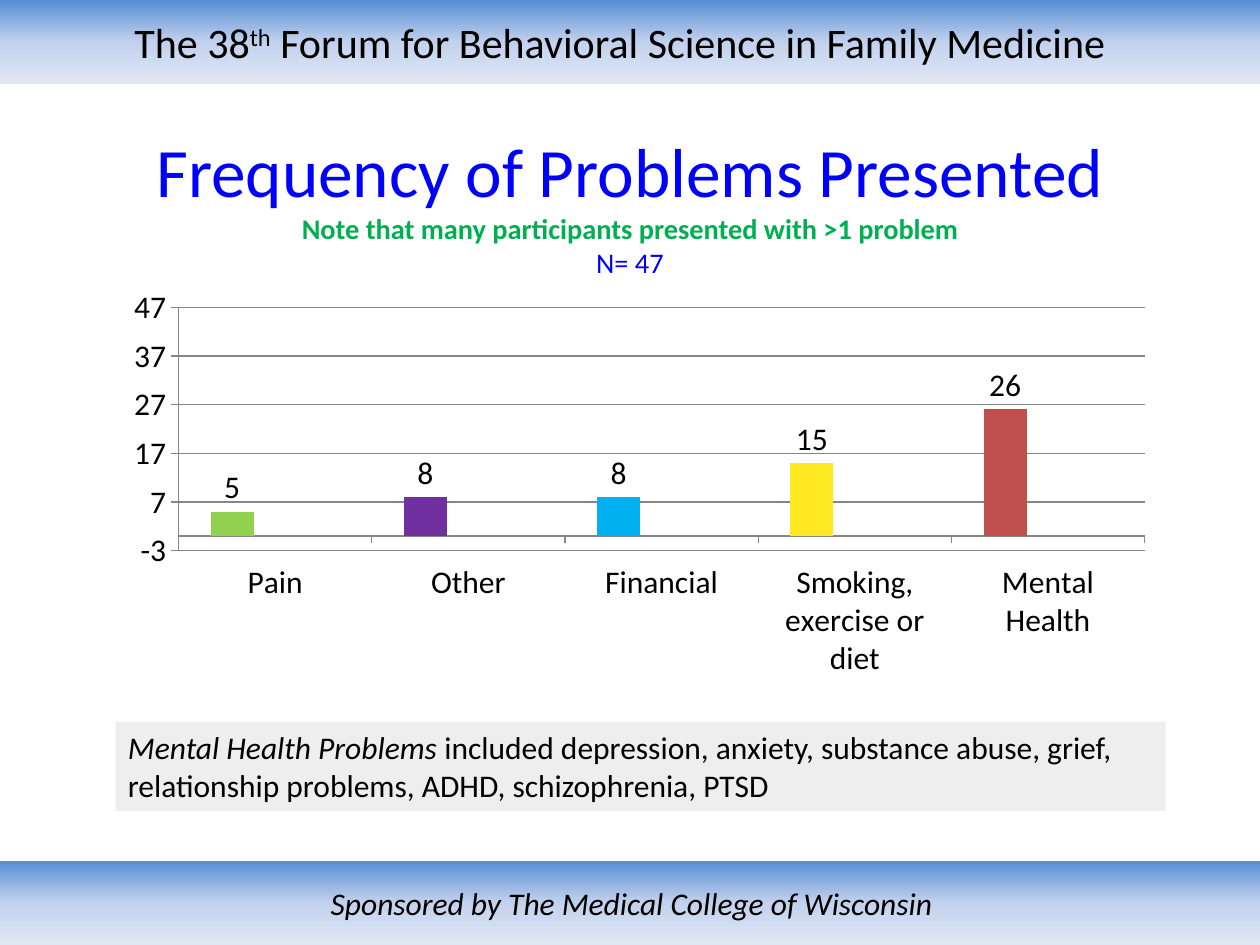
from copy import deepcopy

from lxml.etree import SubElement
from pptx import Presentation
from pptx.chart.data import CategoryChartData
from pptx.dml.color import RGBColor
from pptx.enum.chart import XL_CHART_TYPE, XL_LABEL_POSITION, XL_TICK_LABEL_POSITION, XL_TICK_MARK
from pptx.enum.shapes import MSO_SHAPE
from pptx.enum.text import MSO_ANCHOR, PP_ALIGN
from pptx.oxml.ns import qn
from pptx.util import Cm, Pt

BLACK = RGBColor(0x00, 0x00, 0x00)
BLUE = RGBColor(0x00, 0x00, 0xFF)
GREEN = RGBColor(0x00, 0xB0, 0x50)
GRAY = RGBColor(0xBF, 0xBF, 0xBF)
AXIS_GRAY = RGBColor(0x86, 0x86, 0x86)
BAND_STOPS = [
    (0, RGBColor(0x55, 0x8E, 0xD5)),
    (0.5, RGBColor(0xC2, 0xD1, 0xED)),
    (1, RGBColor(0xE1, 0xE8, 0xF5)),
]
PROBLEMS = [
    ("Pain", 5, RGBColor(0x92, 0xD0, 0x50)),
    ("Other", 8, RGBColor(0x70, 0x30, 0xA0)),
    ("Financial", 8, RGBColor(0x00, 0xB0, 0xF0)),
    ("Smoking, exercise or diet", 15, RGBColor(0xFF, 0xE9, 0x23)),
    ("Mental Health", 26, RGBColor(0xC0, 0x50, 0x4D)),
]
PLOT_LAYOUT = {"x": 0.06, "y": 0.06, "w": 0.92, "h": 0.62}


def apply_format(target, values):
    for name, value in values.items():
        setattr(target, name, value)


class SlideBuilder:
    font_name = "Calibri"

    def __init__(self, slide):
        self.slide = slide

    def set_font(self, font, size, color=BLACK, **values):
        apply_format(font, {"name": self.font_name, "size": Pt(size), **values})
        font.color.rgb = color

    def fill_text(self, shape, paragraphs, alignment=PP_ALIGN.CENTER, **frame_values):
        """Fill a shape with paragraphs, each a list of (text, font values) runs."""
        frame = shape.text_frame
        apply_format(frame, {"word_wrap": True, "vertical_anchor": MSO_ANCHOR.MIDDLE, **frame_values})
        for index, runs in enumerate(paragraphs):
            paragraph = frame.add_paragraph() if index else frame.paragraphs[0]
            paragraph.alignment = alignment
            for text, values in runs:
                values = dict(values)
                baseline = values.pop("baseline", None)
                run = paragraph.add_run()
                run.text = text
                self.set_font(run.font, **values)
                if baseline:
                    run.font._element.set("baseline", baseline)

    def add_rectangle(self, left, top, width, height):
        shape = self.slide.shapes.add_shape(
            MSO_SHAPE.RECTANGLE, Cm(left), Cm(top), Cm(width), Cm(height))
        shape.shadow.inherit = False
        shape.line.fill.background()
        return shape

    def add_band(self, top, width, runs, **frame_values):
        shape = self.add_rectangle(0, top, width, 1.7)
        shape.fill.gradient()
        shape.fill.gradient_angle = 270
        stop_list = shape._element.spPr.find(".//" + qn("a:gsLst"))
        stop_list.append(deepcopy(stop_list[0]))
        for stop, (position, color) in zip(shape.fill.gradient_stops, BAND_STOPS):
            stop.position = position
            stop.color.rgb = color
        self.fill_text(shape, [runs], **frame_values)

    def add_title(self, left, top, width, height, paragraphs, **frame_values):
        box = self.slide.shapes.add_textbox(Cm(left), Cm(top), Cm(width), Cm(height))
        self.fill_text(box, paragraphs, **frame_values)

    def add_note(self, left, top, width, height, runs):
        shape = self.add_rectangle(left, top, width, height)
        shape.fill.solid()
        shape.fill.fore_color.rgb = GRAY
        color = shape._element.spPr.find(".//" + qn("a:srgbClr"))
        SubElement(color, qn("a:alpha"), val="25000")
        self.fill_text(shape, [runs], PP_ALIGN.LEFT, vertical_anchor=MSO_ANCHOR.TOP)

    def add_column_chart(self, left, top, width, height, problems):
        names, counts, colors = zip(*problems)
        data = CategoryChartData()
        data.categories = names
        data.add_series("Series 1", counts)
        for name in ("Series 2", "Series 3"):
            data.add_series(name, [None] * len(names))
        chart = self.slide.shapes.add_chart(
            XL_CHART_TYPE.COLUMN_CLUSTERED, Cm(left), Cm(top), Cm(width), Cm(height), data).chart
        apply_format(chart, {"has_legend": False, "has_title": False})
        self.set_font(chart.font, 18)

        plot = chart.plots[0]
        apply_format(plot, {"gap_width": 150, "overlap": 0, "vary_by_categories": False})
        counted = plot.series[0]
        for series, color in zip(plot.series, (colors[0], colors[-1], RGBColor(0x9B, 0xBB, 0x59))):
            series.format.fill.solid()
            series.format.fill.fore_color.rgb = color
        for index, color in enumerate(colors[1:], start=1):
            fill = counted.points[index].format.fill
            fill.solid()
            fill.fore_color.rgb = color
        apply_format(counted.data_labels,
                     {"show_value": True, "position": XL_LABEL_POSITION.OUTSIDE_END})

        apply_format(chart.value_axis, {"minimum_scale": -3, "maximum_scale": 47,
                                        "major_unit": 10, "has_major_gridlines": True})
        for axis in (chart.category_axis, chart.value_axis):
            apply_format(axis, {"major_tick_mark": XL_TICK_MARK.OUTSIDE,
                                "minor_tick_mark": XL_TICK_MARK.NONE,
                                "tick_label_position": XL_TICK_LABEL_POSITION.LOW})
        for part in (chart.category_axis, chart.value_axis, chart.value_axis.major_gridlines):
            part.format.line.color.rgb = AXIS_GRAY
            part.format.line.width = Pt(0.75)
        self.place_plot(chart)

    def place_plot(self, chart):
        """Fix the inner plot area as fractions of the chart frame."""
        plot_area = chart._chartSpace.find(".//" + qn("c:plotArea"))
        layout = plot_area.find(qn("c:layout"))
        if layout is None:
            layout = SubElement(plot_area, qn("c:layout"))
            plot_area.insert(0, layout)
        manual = SubElement(layout, qn("c:manualLayout"))
        SubElement(manual, qn("c:layoutTarget"), val="inner")
        for side in ("x", "y"):
            SubElement(manual, qn(f"c:{side}Mode"), val="edge")
        for side, fraction in PLOT_LAYOUT.items():
            SubElement(manual, qn(f"c:{side}"), val=str(fraction))


def main():
    presentation = Presentation()
    presentation.slide_width = Cm(25.4)
    presentation.slide_height = Cm(19.05)
    builder = SlideBuilder(presentation.slides.add_slide(presentation.slide_layouts[6]))

    builder.add_band(0, 25.4, [
        ("The 38", {"size": 24}),
        ("th", {"size": 24, "baseline": "30000"}),
        (" Forum for Behavioral Science in Family Medicine", {"size": 24}),
    ], margin_right=Cm(0.65))
    builder.add_band(17.35, 25.47, [
        ("Sponsored by The Medical College of Wisconsin", {"size": 18, "italic": True}),
    ])
    builder.add_title(1.27, 3.38, 22.86, 2.13, [
        [("Frequency of Problems Presented", {"size": 39.6, "color": BLUE})],
        [("Note that many participants presented with >1 problem",
          {"size": 16.2, "color": GREEN, "bold": True})],
        [("N= 47", {"size": 16.2, "color": BLUE})],
    ], margin_bottom=Cm(0.81))
    builder.add_column_chart(2.33, 5.72, 21.17, 7.93, PROBLEMS)
    builder.add_note(2.33, 14.55, 21.17, 1.8, [
        ("Mental Health Problems ", {"size": 18, "italic": True}),
        ("included depression, anxiety, substance abuse, grief, relationship problems, "
         "ADHD, schizophrenia, PTSD", {"size": 18}),
    ])
    presentation.save("out.pptx")


if __name__ == "__main__":
    main()
